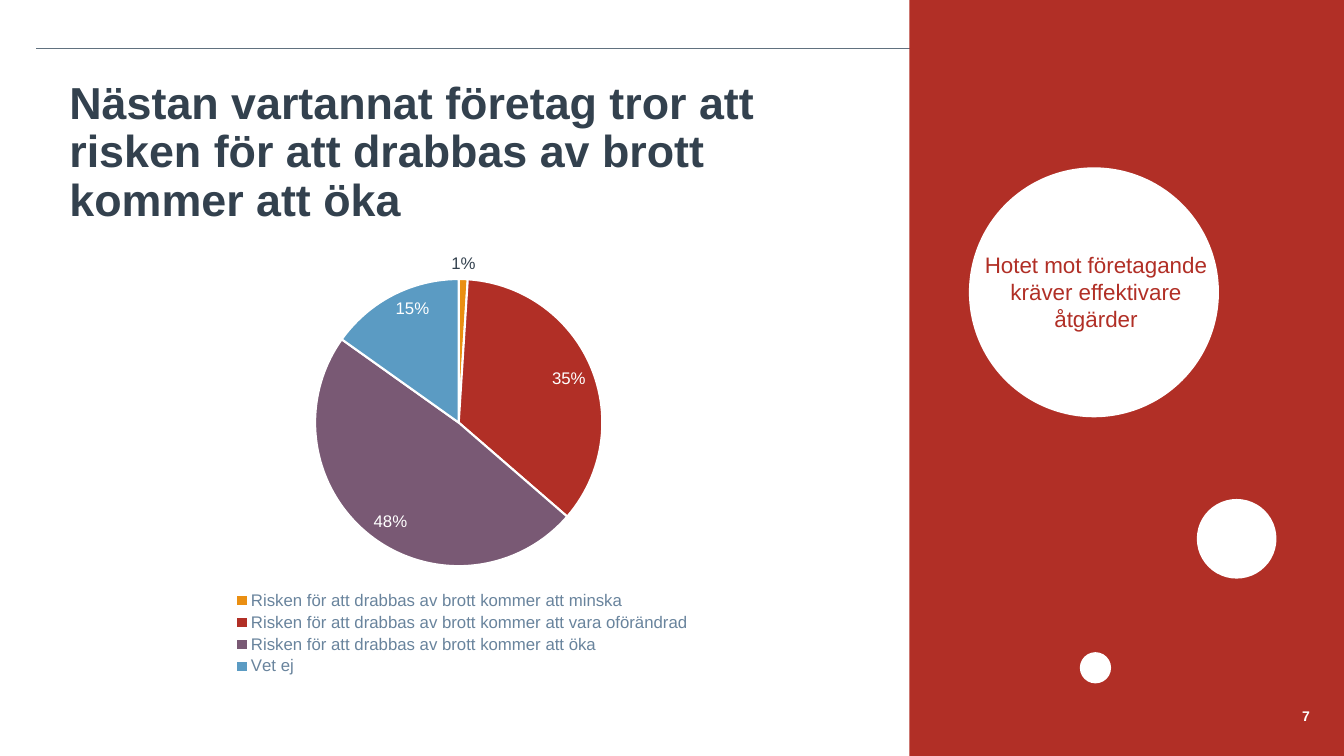
import lxml.etree
import pptx
import pptx.chart.data
import pptx.dml.color
import pptx.enum.chart
import pptx.enum.shapes
import pptx.enum.text
import pptx.oxml
import pptx.oxml.ns
import pptx.util

Inches = pptx.util.Inches
Pt = pptx.util.Pt
Align = pptx.enum.text.PP_ALIGN
Anchor = pptx.enum.text.MSO_ANCHOR
Shape = pptx.enum.shapes.MSO_SHAPE
LabelPosition = pptx.enum.chart.XL_LABEL_POSITION

FONT = "Arial"
COLORS = {
    "white": "FFFFFF",
    "red": "B12F26",
    "dark": "33414E",
    "rule": "61717F",
    "legend": "69849D",
    "orange": "EA8F12",
    "purple": "795974",
    "blue": "5B9BC3",
}
ANSWERS = [
    ("Risken för att drabbas av brott kommer att minska", 0.01, "orange"),
    ("Risken för att drabbas av brott kommer att vara oförändrad", 0.35, "red"),
    ("Risken för att drabbas av brott kommer att öka", 0.48, "purple"),
    ("Vet ej", 0.15, "blue"),
]


def rgb(name):
    return pptx.dml.color.RGBColor.from_string(COLORS[name])


def style_font(font, size, color, bold=False):
    font.name = FONT
    font.size = Pt(size)
    font.bold = bold
    font.color.rgb = rgb(color)


def add_text(slide, text, box, size, color, bold=False, align=Align.LEFT,
             anchor=Anchor.TOP, line_spacing=1.0):
    shape = slide.shapes.add_textbox(*[Inches(value) for value in box])
    frame = shape.text_frame
    frame.word_wrap = True
    frame.vertical_anchor = anchor
    paragraph = frame.paragraphs[0]
    paragraph.alignment = align
    paragraph.line_spacing = line_spacing
    run = paragraph.add_run()
    run.text = text
    style_font(run.font, size, color, bold)


def add_block(slide, kind, box, color):
    shape = slide.shapes.add_shape(kind, *[Inches(value) for value in box])
    shape.shadow.inherit = False
    shape.fill.solid()
    shape.fill.fore_color.rgb = rgb(color)
    shape.line.fill.background()


def add_rule(slide, left, top, right):
    rule = slide.shapes.add_connector(
        pptx.enum.shapes.MSO_CONNECTOR.STRAIGHT,
        Inches(left), Inches(top), Inches(right), Inches(top))
    rule.line.color.rgb = rgb("rule")
    rule.line.width = Pt(0.5)
    lxml.etree.SubElement(rule._element.spPr, pptx.oxml.ns.qn("a:effectLst"))


def manual_layout(x, y, width, height, inner=False):
    target = '<c:layoutTarget val="inner"/>' if inner else ""
    return pptx.oxml.parse_xml(
        f'<c:layout {pptx.oxml.ns.nsdecls("c")}><c:manualLayout>{target}'
        '<c:xMode val="edge"/><c:yMode val="edge"/>'
        f'<c:x val="{x}"/><c:y val="{y}"/><c:w val="{width}"/><c:h val="{height}"/>'
        '</c:manualLayout></c:layout>')


def add_risk_chart(slide, box):
    data = pptx.chart.data.CategoryChartData(number_format="###0%")
    data.categories = [answer for answer, _, _ in ANSWERS]
    data.add_series("Series 1", [share for _, share, _ in ANSWERS])
    chart = slide.shapes.add_chart(
        pptx.enum.chart.XL_CHART_TYPE.PIE,
        *[Inches(value) for value in box], data).chart
    chart.has_title = False
    style_font(chart.font, 10, "dark")

    # Slices
    plot = chart.plots[0]
    plot.vary_by_categories = True
    series = plot.series[0]
    for index, (_, _, color) in enumerate(ANSWERS):
        slice_format = series.points[index].format
        slice_format.fill.solid()
        slice_format.fill.fore_color.rgb = rgb(color)
        slice_format.line.color.rgb = rgb("white")
        slice_format.line.width = Pt(1.5)

    # Value labels, with the smallest slice labelled outside
    labels = series.data_labels
    labels.show_value = True
    labels.show_percentage = False
    labels.number_format = "###0%"
    labels.number_format_is_linked = False
    labels.position = LabelPosition.INSIDE_END
    style_font(labels.font, 12, "white")
    small_label = series.points[0].data_label
    style_font(small_label.font, 12, "dark")
    small_label.position = LabelPosition.OUTSIDE_END

    # Legend and plot placement
    chart.has_legend = True
    legend = chart.legend
    legend.position = pptx.enum.chart.XL_LEGEND_POSITION.BOTTOM
    legend.include_in_layout = False
    style_font(legend.font, 12, "legend")
    qn = pptx.oxml.ns.qn
    for old_layout in legend._element.findall(qn("c:layout")):
        legend._element.remove(old_layout)
    legend._element.find(qn("c:legendPos")).addnext(
        manual_layout(0.2, 0.79, 0.61, 0.21))
    plot_area = chart._chartSpace.chart.plotArea
    for old_layout in plot_area.findall(qn("c:layout")):
        plot_area.remove(old_layout)
    plot_area.insert(0, manual_layout(0.3125, 0.087, 0.375, 0.655, inner=True))


def add_side_panel(slide, left, top, width, height):
    add_block(slide, Shape.RECTANGLE, (left, top, width, height), "red")
    # Bubbles: offset from the panel corner, and diameter
    for x, y, diameter in [(0.59, 1.68, 2.48), (2.85, 4.97, 0.79), (1.69, 6.49, 0.31)]:
        add_block(slide, Shape.OVAL, (left + x, top + y, diameter, diameter), "white")
    add_text(slide, "Hotet mot företagande kräver effektivare åtgärder",
             (left + 0.59, top + 1.68, 2.52, 2.46), 16, "red",
             align=Align.CENTER, anchor=Anchor.MIDDLE)
    add_text(slide, "7", (left + 3.07, top + 6.99, 1.0, 0.27), 10, "white",
             bold=True, align=Align.RIGHT)


def add_main_area(slide, left, top, width):
    add_text(slide,
             "Nästan vartannat företag tror att risken för att drabbas av brott kommer att öka",
             (left, top, width, 1.5), 32, "dark", bold=True, line_spacing=0.9)
    add_risk_chart(slide, (left + 0.16, top + 1.64, width, 4.35))


def main():
    presentation = pptx.Presentation()
    presentation.slide_width = Inches(13.33)
    presentation.slide_height = Inches(7.5)
    slide = presentation.slides.add_slide(presentation.slide_layouts[6])
    add_rule(slide, 0.36, 0.48, 12.89)
    add_side_panel(slide, 9.02, -0.02, 4.31, 7.52)
    add_main_area(slide, 0.59, 0.75, 7.6)
    presentation.save("out.pptx")


if __name__ == "__main__":
    main()
